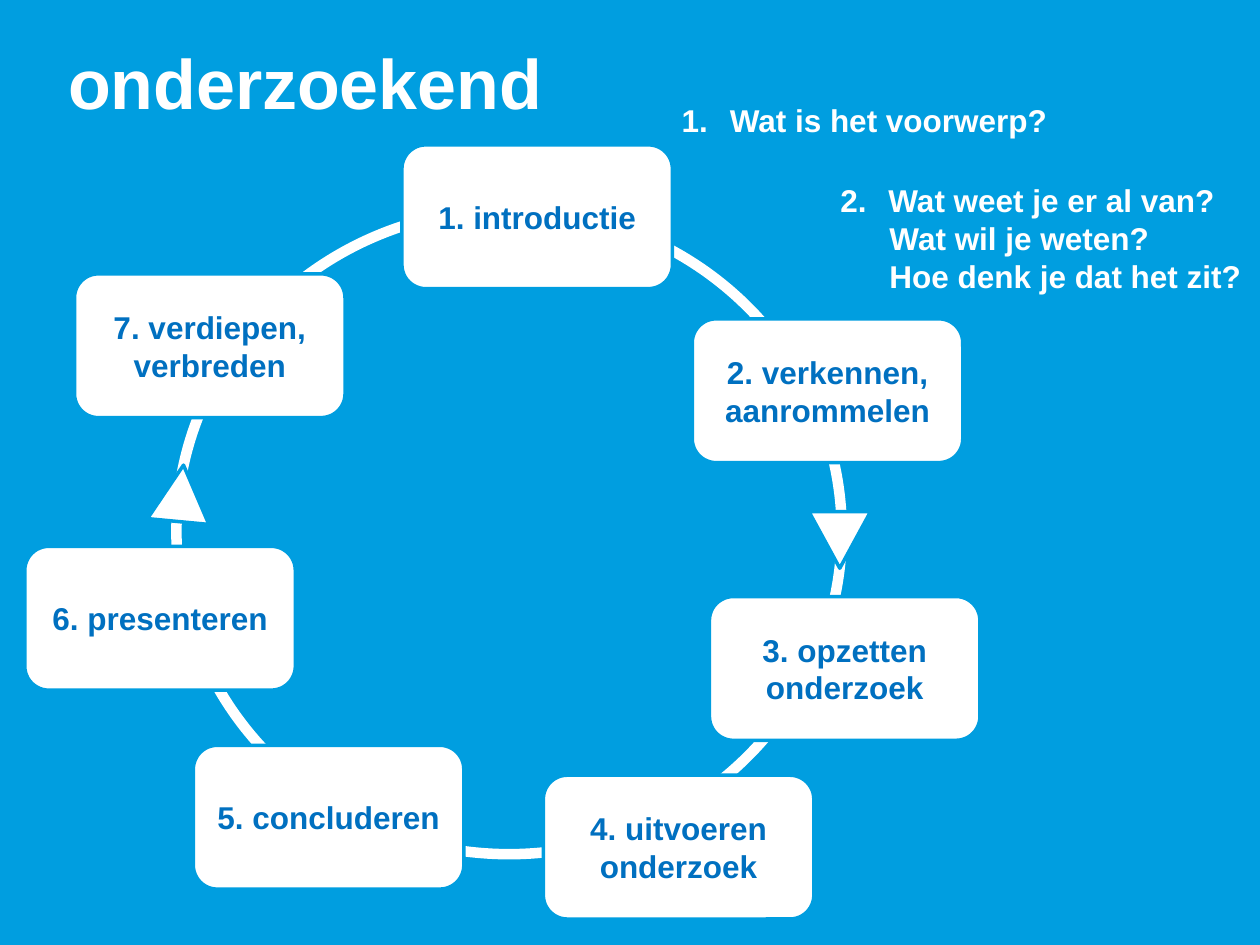
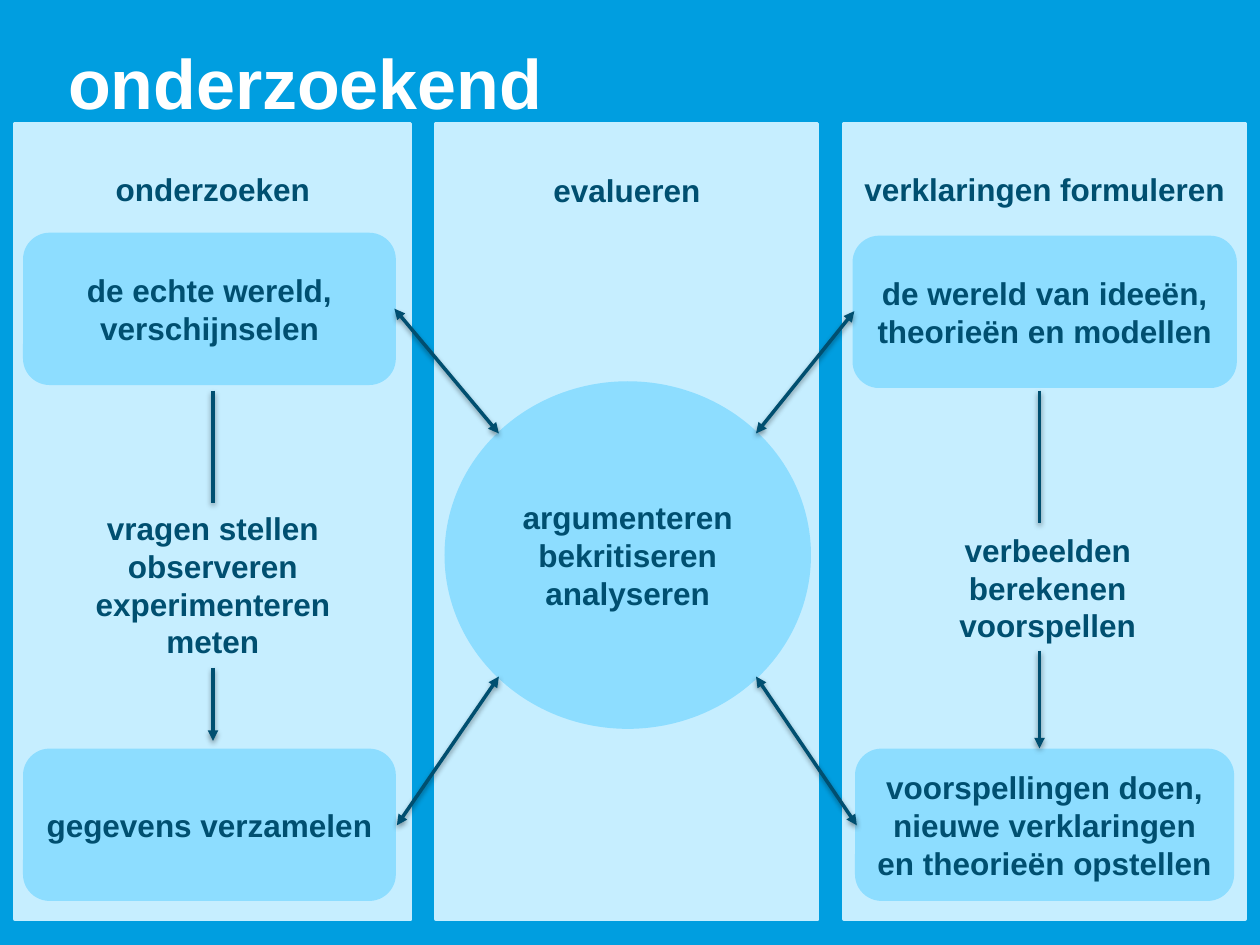
from lxml.etree import SubElement
from pptx import Presentation
from pptx.dml.color import RGBColor
from pptx.enum.shapes import MSO_CONNECTOR, MSO_SHAPE as SHAPE
from pptx.enum.text import MSO_ANCHOR as ANCHOR, MSO_AUTO_SIZE as AUTOSIZE, PP_ALIGN as ALIGN
from pptx.oxml.ns import qn
from pptx.util import Pt

# Colours
SKY = RGBColor(0x00, 0x9E, 0xE0)
PALE = RGBColor(0xC6, 0xEE, 0xFF)
LIGHT = RGBColor(0x8D, 0xDD, 0xFF)
NAVY = RGBColor(0x00, 0x4F, 0x70)
BLUE = RGBColor(0x00, 0x70, 0xC0)
WHITE = RGBColor(0xFF, 0xFF, 0xFF)

TWO_CONTENT, TITLE_ONLY = 3, 5
LIST_INDENT = 27.5


def write_text(frame, text, size=18, color=NAVY, align=ALIGN.CENTER, anchor=ANCHOR.MIDDLE):
    """Fill a text frame, one paragraph for each line of text."""
    frame.auto_size = AUTOSIZE.NONE
    frame.word_wrap = True
    frame.vertical_anchor = anchor
    for index, line in enumerate(text.split("\n")):
        paragraph = frame.paragraphs[0] if index == 0 else frame.add_paragraph()
        paragraph.alignment = align
        paragraph.space_before = Pt(0)
        run = paragraph.add_run()
        run.text = line
        run.font.name = "Arial"
        run.font.size = Pt(size)
        run.font.bold = True
        run.font.color.rgb = color


def place(shape, left, top, width, height):
    shape.left, shape.top, shape.width, shape.height = map(Pt, (left, top, width, height))


class Deck:
    def __init__(self):
        self.show = Presentation()
        self.show.slide_width, self.show.slide_height = Pt(720), Pt(540)
        self.slide = None

    def add_slide(self, layout, title, title_width):
        self.slide = self.show.slides.add_slide(self.show.slide_layouts[layout])
        self.slide.background.fill.solid()
        self.slide.background.fill.fore_color.rgb = SKY
        heading = self.slide.shapes.title
        place(heading, 31.7, 21, title_width, 51)
        write_text(heading.text_frame, title, size=40, color=WHITE, align=ALIGN.LEFT)

    def numbered(self, slot, number, text, box):
        """Number the first line; indent the others to match."""
        body = self.slide.placeholders[slot]
        place(body, *box)
        write_text(body.text_frame, text, color=WHITE, align=ALIGN.LEFT, anchor=ANCHOR.TOP)
        for index, paragraph in enumerate(body.text_frame.paragraphs):
            props = paragraph._p.get_or_add_pPr()
            props.set("marL", str(Pt(LIST_INDENT if index == 0 else LIST_INDENT + 0.6)))
            props.set("indent", str(Pt(-LIST_INDENT if index == 0 else 0)))
            if index == 0:
                SubElement(props, qn("a:buAutoNum"), type="arabicPeriod", startAt=str(number))
            else:
                SubElement(props, qn("a:buNone"))

    def shape(self, kind, box, fill=None, line=None, weight=2, rotation=0, text=None, color=NAVY):
        item = self.slide.shapes.add_shape(kind, *map(Pt, box))
        item.shadow.inherit = False
        item.rotation = rotation
        if fill is None:
            item.fill.background()
        else:
            item.fill.solid()
            item.fill.fore_color.rgb = fill
        item.line.color.rgb = fill if line is None else line
        item.line.width = Pt(weight)
        if text:
            write_text(item.text_frame, text, color=color)

    def label(self, text, box):
        item = self.slide.shapes.add_textbox(*map(Pt, box))
        write_text(item.text_frame, text, anchor=ANCHOR.TOP)

    def arrow(self, start, end, heads=()):
        """Draw a line with a soft shadow; heads names its arrow ends."""
        item = self.slide.shapes.add_connector(MSO_CONNECTOR.STRAIGHT, *map(Pt, start + end))
        item.line.color.rgb = NAVY
        item.line.width = Pt(2)
        for head in heads:
            SubElement(item.line._get_or_add_ln(), qn(f"a:{head}"), type="triangle")
        effects = SubElement(item._element.spPr, qn("a:effectLst"))
        shadow = SubElement(effects, qn("a:outerShdw"), blurRad=str(Pt(3.1)), dist=str(Pt(1.6)),
                            dir="5400000", rotWithShape="0")
        black = SubElement(shadow, qn("a:srgbClr"), val="000000")
        SubElement(black, qn("a:alpha"), val="38000")


def build_cycle(deck):
    deck.add_slide(TWO_CONTENT, "onderzoekend", 312)

    # Questions beside the first two steps
    deck.numbered(1, 1, "Wat is het voorwerp?", (382.3, 54, 283.7, 28.8))
    deck.numbered(2, 2, "Wat weet je er al van?\nWat wil je weten?\nHoe denk je dat het zit?",
                  (473, 100.1, 283.7, 72.7))

    # Ring with its direction markers
    deck.shape(SHAPE.OVAL, (100.8, 119.5, 380.2, 368.6), line=WHITE, weight=6)
    for left, top, rotation in ((462.2, 292.3, 180), (85.7, 265.7, 5.4)):
        deck.shape(SHAPE.ISOSCELES_TRIANGLE, (left, top, 35.3, 32.4), WHITE, SKY, rotation=rotation)

    # Steps, clockwise
    steps = (
        ("introductie", 229.7, 82.8),
        ("verkennen, aanrommelen", 395.6, 182.2),
        ("opzetten onderzoek", 405.4, 340.9),
        ("uitvoeren onderzoek", 310.5, 443),
        ("concluderen", 110.5, 425.9),
        ("presenteren", 14.2, 312.2),
        ("verdiepen, verbreden", 42.6, 156.5),
    )
    for number, (step, left, top) in enumerate(steps, 1):
        deck.shape(SHAPE.ROUNDED_RECTANGLE, (left, top, 154.6, 82.2), WHITE, SKY,
                   text=f"{number}. {step}", color=BLUE)


def build_model(deck):
    deck.add_slide(TITLE_ONLY, "onderzoekend", 657)

    # Columns with headings
    columns = (
        ("onderzoeken", 8.6, 226.1, 93.6),
        ("evalueren", 249.1, 218.2, 94.3),
        ("verklaringen formuleren", 482.4, 229, 93.6),
    )
    for heading, left, width, heading_top in columns:
        deck.shape(SHAPE.RECTANGLE, (left, 70.6, width, 454.7), PALE)
        deck.label(heading, (left, heading_top, width, 28.8))

    # Starting points and results
    for text, left, top, width in (
        ("de echte wereld,\nverschijnselen", 14.2, 134, 211),
        ("gegevens verzamelen", 14.2, 428.8, 211),
        ("de wereld van ideeën, theorieën en modellen", 488.2, 135.7, 217.6),
        ("voorspellingen doen,\nnieuwe verklaringen en theorieën opstellen", 489.6, 428.8, 214.6),
    ):
        deck.shape(SHAPE.ROUNDED_RECTANGLE, (left, top, width, 85), LIGHT, text=text)
    deck.shape(SHAPE.OVAL, (255, 218.9, 207.4, 196.6), LIGHT,
               text="argumenteren\nbekritiseren\nanalyseren")

    # Activities, each between a line and an arrow
    for text, box, x, line_end, arrow_start, arrow_end in (
        ("vragen stellen\nobserveren\nexperimenteren\nmeten",
         (8.6, 287.3, 226.1, 94.3), 121.7, 287.3, 381.6, 423.4),
        ("verbeelden\nberekenen\nvoorspellen",
         (486, 299.8, 225.4, 72.7), 594, 298.8, 371.8, 427.7),
    ):
        deck.label(text, box)
        deck.arrow((x, 223.2), (x, line_end))
        deck.arrow((x, arrow_start), (x, arrow_end), heads=("tailEnd",))

    # Exchange between the circle and the four boxes
    for start, end in (
        ((225.4, 176.4), (285.1, 247.7)),
        ((488.2, 177.8), (432, 247.7)),
        ((285.1, 386.6), (226.8, 471.6)),
        ((432, 386.6), (489.6, 471.6)),
    ):
        deck.arrow(start, end, heads=("headEnd", "tailEnd"))


def main():
    deck = Deck()
    build_cycle(deck)
    build_model(deck)
    deck.show.save("out.pptx")


if __name__ == "__main__":
    main()
